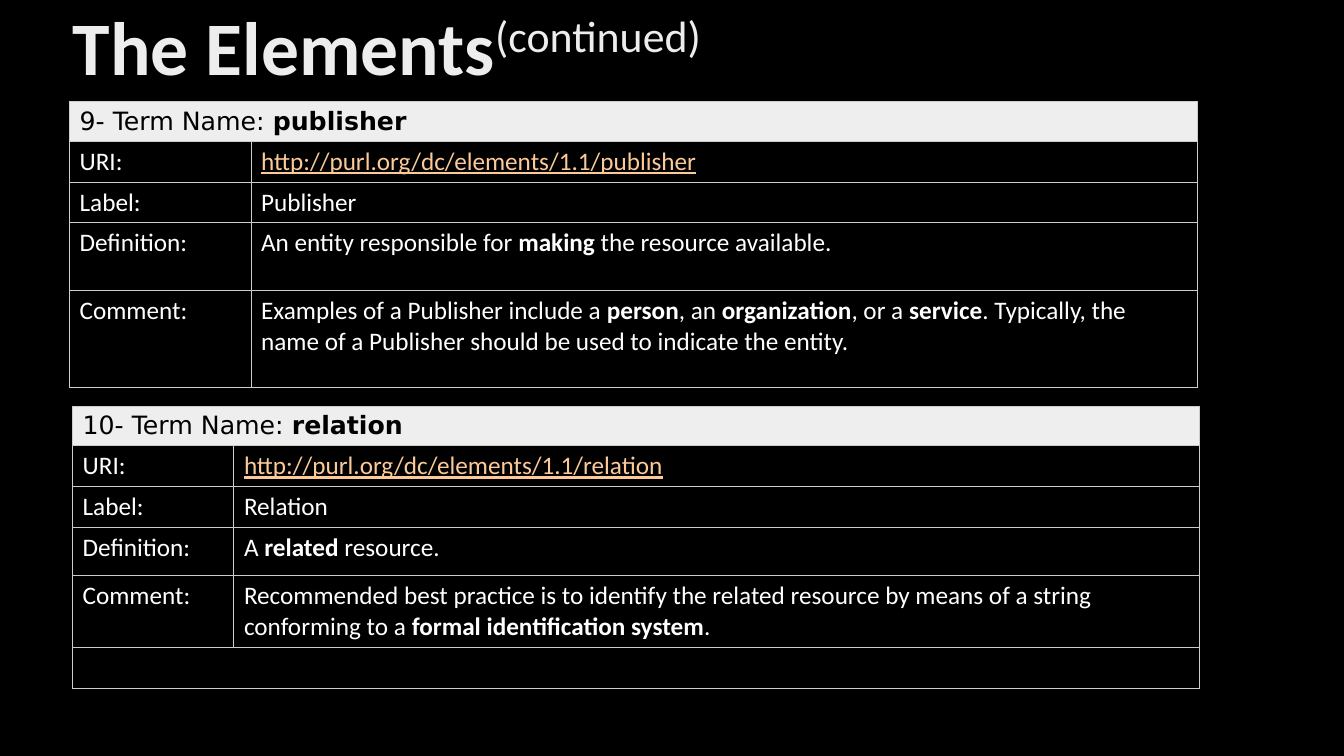
from lxml import etree
from pptx import Presentation
from pptx.dml.color import RGBColor
from pptx.enum.text import MSO_ANCHOR, MSO_AUTO_SIZE, PP_ALIGN
from pptx.oxml.ns import qn
from pptx.util import Inches, Pt

LEFT = PP_ALIGN.LEFT
MIDDLE = MSO_ANCHOR.MIDDLE
NO_FIT = MSO_AUTO_SIZE.NONE
BLACK, WHITE, PALE = "000000", "FFFFFF", "EEEEEE"
LINK, RULE, TITLE = "FBCA98", "CCCCCC", "EDEDED"
BODY, HEAD = "Calibri", "DejaVu Sans"
LABELS = ["URI:", "Label:", "Definition:", "Comment:"]

PUBLISHER = [
    "http://purl.org/dc/elements/1.1/publisher",
    "Publisher",
    "An entity responsible for *making* the resource available.",
    "Examples of a Publisher include a *person*, an *organization*, or a "
    "*service*. Typically, the name of a Publisher should be used to "
    "indicate the entity.",
]
RELATION = [
    "http://purl.org/dc/elements/1.1/relation",
    "Relation",
    "A *related* resource.",
    "Recommended best practice is to identify the related resource by means "
    "of a string conforming to a *formal identification system*.",
]


def color(code):
    """Turn a hex string into a colour."""
    return RGBColor.from_string(code)


def style(run, size, face, code, bold=False):
    """Set the font of a run."""
    font = run.font
    font.size, font.name, font.bold = Pt(size), face, bold
    font.color.rgb = color(code)


def write(cell, text, face=BODY, code=WHITE):
    """Fill a cell with text in which starred parts are bold."""
    para = cell.text_frame.paragraphs[0]
    for i, part in enumerate(text.split("*")):
        if part:
            run = para.add_run()
            run.text = part
            style(run, 18, face, code, i % 2 == 1)


def border(cell):
    """Draw a thin line on all four sides of a cell."""
    props = cell._tc.get_or_add_tcPr()
    for i, side in enumerate(["a:lnL", "a:lnR", "a:lnT", "a:lnB"]):
        line = etree.Element(qn(side), w=str(Pt(0.75)))
        fill = etree.SubElement(line, qn("a:solidFill"))
        etree.SubElement(fill, qn("a:srgbClr"), val=RULE)
        props.insert(i, line)


def add_title(slide):
    """Place the title with its raised suffix."""
    title = slide.shapes.title
    title.left, title.top = Inches(0.62), Inches(0)
    title.width, title.height = Inches(11.5), Inches(1.01)
    frame = title.text_frame
    frame.auto_size, frame.vertical_anchor = NO_FIT, MIDDLE
    frame.text = "The Elements"
    para = frame.paragraphs[0]
    para.alignment, para.line_spacing = LEFT, 0.9
    style(para.runs[0], 54, BODY, TITLE, True)
    suffix = para.add_run()
    suffix.text = "(continued)"
    style(suffix, 54, BODY, TITLE)
    suffix.font._element.set("baseline", "30000")


def add_term(slide, left, top, cols, rows, name, values):
    """Add the table that describes one term."""
    frame = slide.shapes.add_table(
        len(rows), len(cols), Inches(left), Inches(top),
        Inches(sum(cols)), Inches(sum(rows)))
    table = frame.table
    for col, width in zip(table.columns, cols):
        col.width = Inches(width)
    for row, height in zip(table.rows, rows):
        row.height = Inches(height)
    for cell in table.iter_cells():
        cell.fill.background()
    head = table.cell(0, 0)
    head.fill.solid()
    head.fill.fore_color.rgb = color(PALE)
    write(head, name, HEAD, BLACK)
    for i, (label, value) in enumerate(zip(LABELS, values), 1):
        write(table.cell(i, 0), label)
        write(table.cell(i, 1), value, code=LINK if i == 1 else WHITE)
    table.cell(1, 1).text_frame.paragraphs[0].runs[0].font.underline = True
    for i in range(len(rows)):
        if not 1 <= i <= len(LABELS):
            table.cell(i, 0).merge(table.cell(i, 1))
    for cell in table.iter_cells():
        border(cell)


def main():
    """Build and save the slide."""
    deck = Presentation()
    deck.slide_width, deck.slide_height = Inches(13.33), Inches(7.5)
    slide = deck.slides.add_slide(deck.slide_layouts[5])
    back = slide.background.fill
    back.solid()
    back.fore_color.rgb = color(BLACK)
    add_title(slide)
    add_term(slide, 0.69, 1.01, [1.8, 9.39], [0.38, 0.38, 0.38, 0.67, 0.96],
             "9- Term Name: *publisher*", PUBLISHER)
    add_term(slide, 0.72, 4.03, [1.6, 9.58],
             [0.34, 0.34, 0.34, 0.48, 0.67, 0.34],
             "10- Term Name: *relation*", RELATION)
    deck.save("out.pptx")


if __name__ == "__main__":
    main()
